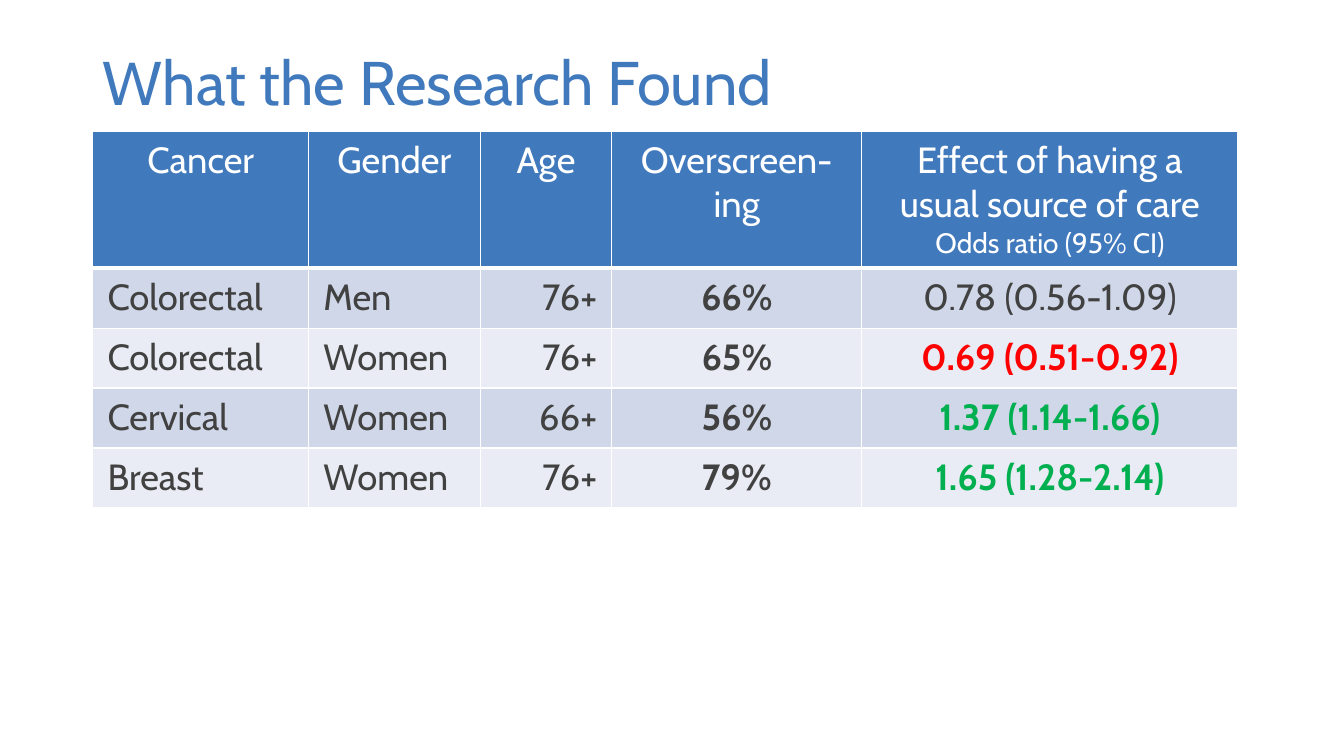
from dataclasses import dataclass

from lxml import etree
from pptx import Presentation
from pptx.dml.color import RGBColor
from pptx.enum.text import MSO_ANCHOR, MSO_AUTO_SIZE, PP_ALIGN
from pptx.oxml.ns import qn
from pptx.slide import Slide
from pptx.table import _Cell
from pptx.text.text import TextFrame
from pptx.util import Cm, Pt

LEFT, CENTER, RIGHT = PP_ALIGN.LEFT, PP_ALIGN.CENTER, PP_ALIGN.RIGHT
MIDDLE = MSO_ANCHOR.MIDDLE
NO_AUTOFIT = MSO_AUTO_SIZE.NONE


@dataclass(frozen=True)
class Theme:
    font: str = "Cabin"
    blue: str = "4179BD"
    white: str = "FFFFFF"
    text: str = "414141"
    red: str = "FF0000"
    green: str = "00B050"
    bands: tuple[str, str] = ("CFD7E8", "E9ECF4")
    title_size: int = 44
    table_size: int = 26
    note_size: int = 20


@dataclass(frozen=True)
class Column:
    heading: str
    width: float
    align: PP_ALIGN = LEFT
    bold: bool = False
    note: str = ""


@dataclass(frozen=True)
class Finding:
    cancer: str
    gender: str
    age: str
    overscreening: str
    effect: str
    effect_color: str = ""


THEME = Theme()
COLUMNS = [
    Column("Cancer", 5.44),
    Column("Gender", 4.32),
    Column("Age", 3.32, RIGHT),
    Column("Overscreen-ing", 6.3, CENTER, bold=True),
    Column("Effect of having a usual source of care", 9.48, CENTER,
           note="Odds ratio (95% CI)"),
]
FINDINGS = [
    Finding("Colorectal", "Men", "76+", "66%", "0.78 (0.56-1.09)"),
    Finding("Colorectal", "Women", "76+", "65%", "0.69 (0.51-0.92)", THEME.red),
    Finding("Cervical", "Women", "66+", "56%", "1.37 (1.14-1.66)", THEME.green),
    Finding("Breast", "Women", "76+", "79%", "1.65 (1.28-2.14)", THEME.green),
]
TABLE_LEFT, TABLE_TOP = 2.34, 3.31
HEADER_HEIGHT, ROW_HEIGHT = 2.87, 1.51


def write(frame: TextFrame, text: str, *, size: int = THEME.table_size,
          color: str = THEME.text, bold: bool = False, align: PP_ALIGN = LEFT,
          line_spacing: float = 1.0, append: bool = False) -> None:
    para = frame.add_paragraph() if append else frame.paragraphs[0]
    para.alignment = align
    para.line_spacing = line_spacing
    span = para.add_run()
    span.text = text
    span.font.name = THEME.font
    span.font.size = Pt(size)
    span.font.bold = bold
    span.font.color.rgb = RGBColor.from_string(color)


def set_borders(cell: _Cell, color: str, widths: dict[str, float]) -> None:
    properties = cell._tc.get_or_add_tcPr()
    for side in ("L", "R", "T", "B"):
        line = etree.SubElement(properties, qn(f"a:ln{side}"), w=str(Pt(widths[side])))
        fill = etree.SubElement(line, qn("a:solidFill"))
        etree.SubElement(fill, qn("a:srgbClr"), val=color)


def format_cell(cell: _Cell, fill: str) -> None:
    cell.margin_left = cell.margin_right = Cm(0.37)
    cell.margin_top = cell.margin_bottom = Cm(0.18)
    cell.fill.solid()
    cell.fill.fore_color.rgb = RGBColor.from_string(fill)


def add_title(page: Slide, text: str) -> None:
    title = page.shapes.title
    title.left, title.top = Cm(2.34), Cm(1.02)
    title.width, title.height = Cm(29.21), Cm(2.29)
    frame = title.text_frame
    frame.word_wrap = True
    frame.auto_size = NO_AUTOFIT
    frame.vertical_anchor = MIDDLE
    write(frame, text, size=THEME.title_size, color=THEME.blue, line_spacing=0.9)


def add_findings(page: Slide) -> None:
    width = sum(column.width for column in COLUMNS)
    height = HEADER_HEIGHT + ROW_HEIGHT * len(FINDINGS)
    table = page.shapes.add_table(len(FINDINGS) + 1, len(COLUMNS), Cm(TABLE_LEFT),
                                  Cm(TABLE_TOP), Cm(width), Cm(height)).table
    table.rows[0].height = Cm(HEADER_HEIGHT)
    for index, column in enumerate(COLUMNS):
        table.columns[index].width = Cm(column.width)
        cell = table.cell(0, index)
        set_borders(cell, THEME.white, {"L": 1, "R": 1, "T": 1, "B": 3})
        format_cell(cell, THEME.blue)
        write(cell.text_frame, column.heading, color=THEME.white, align=CENTER)
        if column.note:
            write(cell.text_frame, column.note, size=THEME.note_size,
                  color=THEME.white, align=CENTER, append=True)

    for row, finding in enumerate(FINDINGS, start=1):
        table.rows[row].height = Cm(ROW_HEIGHT)
        values = (finding.cancer, finding.gender, finding.age, finding.overscreening)
        for index, (column, value) in enumerate(zip(COLUMNS, values + (finding.effect,))):
            highlight = finding.effect_color if index == len(values) else ""
            cell = table.cell(row, index)
            format_cell(cell, THEME.bands[(row - 1) % 2])
            write(cell.text_frame, value, color=highlight or THEME.text,
                  bold=column.bold or bool(highlight), align=column.align)


def main() -> None:
    deck = Presentation()
    deck.slide_width, deck.slide_height = Cm(33.87), Cm(19.05)
    page = deck.slides.add_slide(deck.slide_layouts.get_by_name("Title Only"))
    add_title(page, "What the Research Found")
    add_findings(page)
    deck.save("out.pptx")


if __name__ == "__main__":
    main()
